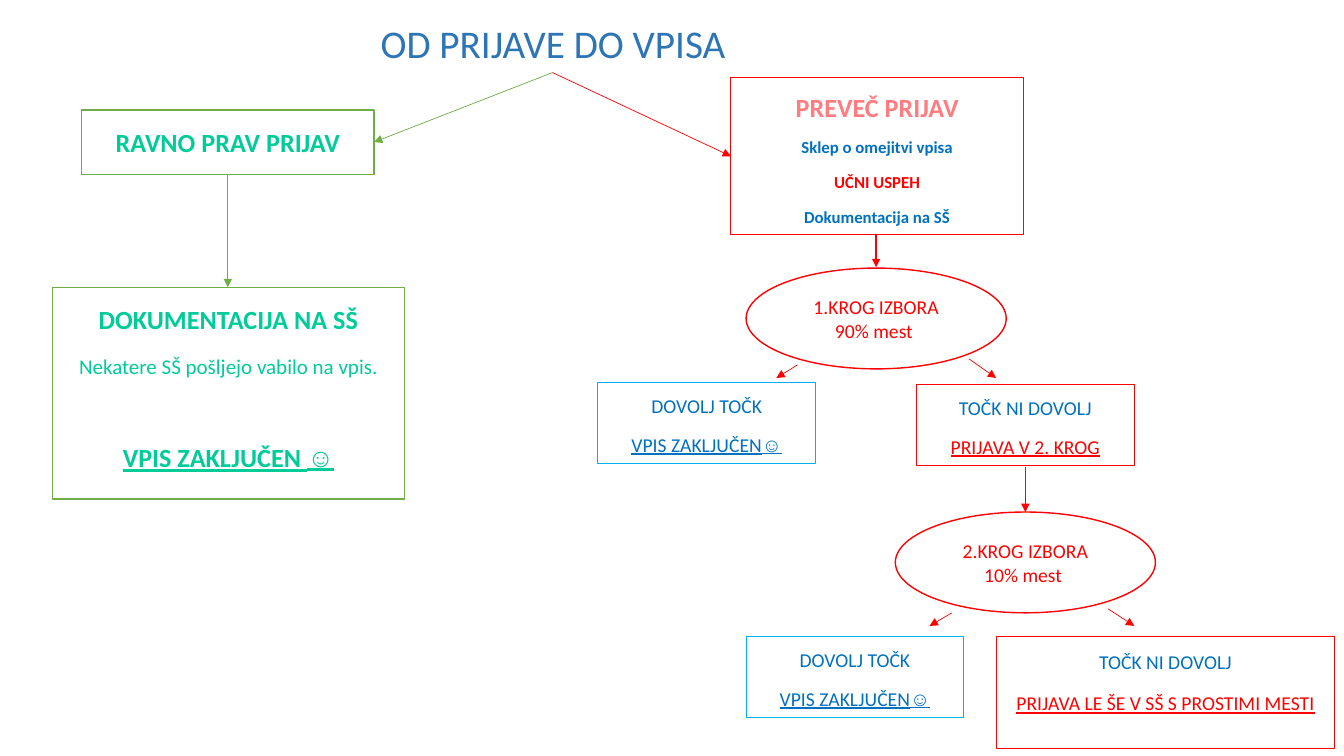
from lxml import etree
from pptx import Presentation
from pptx import util as u
from pptx.dml.color import RGBColor
from pptx.enum import shapes, text
from pptx.oxml import ns

PX = 9144  # 100 px to the inch
COLOURS = {
    "title": "2E75B6", "green": "70AD47", "mint": "00CC99", "white": "FFFFFF",
    "red": "FF0000", "pink": "FF7C80", "blue": "0070C0", "sky": "00B0F0",
}
SMILEY = "☺"


def colour(name):
    return RGBColor.from_string(COLOURS[name])


def line(words, size, ink, bold=False, underline=False, before=7.5):
    return {"words": words, "size": size, "ink": ink, "bold": bold,
            "underline": underline, "before": before}


class FlowPage:
    font = "Calibri"
    symbol_font = "Arial Narrow"

    def __init__(self, deck):
        self.page = deck.slides.add_slide(deck.slide_layouts[5])

    def fill_text(self, frame, lines, spacing=None):
        frame.word_wrap = True
        for number, item in enumerate(lines):
            para = frame.add_paragraph() if number else frame.paragraphs[0]
            para.alignment = text.PP_ALIGN.CENTER
            if spacing:
                para.line_spacing = spacing
                para.space_before = u.Pt(item["before"])
            para.font.size = u.Pt(item["size"])
            para.font.bold = item["bold"]
            para.font.underline = item["underline"]
            para.font.color.rgb = colour(item["ink"])
            para.font.name = self.font
            words, smiley, _ = item["words"].partition(SMILEY)
            para.add_run().text = words
            if smiley:
                span = para.add_run()
                span.text = smiley
                span.font.name = self.symbol_font

    def title(self, place, item):
        box = self.page.shapes.title
        box.left, box.top, box.width, box.height = (n * PX for n in place)
        box.text_frame.auto_size = text.MSO_AUTO_SIZE.NONE
        box.text_frame.vertical_anchor = text.MSO_ANCHOR.TOP
        self.fill_text(box.text_frame, [item])

    def outline(self, kind, place, edge, weight, fill=None):
        shape = self.page.shapes.add_shape(kind, *(n * PX for n in place))
        shape.shadow.inherit = False
        if fill:
            shape.fill.solid()
            shape.fill.fore_color.rgb = colour(fill)
        else:
            shape.fill.background()
        shape.line.color.rgb = colour(edge)
        shape.line.width = u.Pt(weight)
        return shape

    def box(self, place, edge, lines, weight=0.75, spacing=1.2, fill=None):
        shape = self.outline(shapes.MSO_SHAPE.RECTANGLE, place, edge, weight, fill)
        frame = shape.text_frame
        frame.vertical_anchor = text.MSO_ANCHOR.TOP
        frame.margin_left = frame.margin_right = 13 * PX
        frame.margin_top = frame.margin_bottom = 7 * PX
        self.fill_text(frame, lines, spacing)

    def ellipse(self, place, edge, lines):
        shape = self.outline(shapes.MSO_SHAPE.OVAL, place, edge, 1)
        shape.text_frame.vertical_anchor = text.MSO_ANCHOR.MIDDLE
        self.fill_text(shape.text_frame, lines)

    def arrow(self, start, end, ink, weight=0.5):
        link = self.page.shapes.add_connector(
            shapes.MSO_CONNECTOR.STRAIGHT, *(n * PX for n in start + end))
        link.line.color.rgb = colour(ink)
        link.line.width = u.Pt(weight)
        properties = link.element.spPr
        etree.SubElement(properties.find(ns.qn("a:ln")), ns.qn("a:tailEnd"), type="triangle")
        etree.SubElement(properties, ns.qn("a:effectLst"))


def draw_enough(flow):
    """Left branch: the number of applications fits."""
    style = {"weight": 1, "spacing": 1.3, "fill": "white"}
    flow.box((81, 109, 290, 64), "green",
             [line("RAVNO PRAV PRIJAV", 18.7, "mint", bold=True)], **style)
    flow.box((52, 285, 349, 210), "green", [
        line("DOKUMENTACIJA NA SŠ", 18.7, "mint", bold=True),
        line("Nekatere SŠ pošljejo vabilo na vpis.", 15, "mint"),
        line("VPIS ZAKLJUČEN " + SMILEY, 18.7, "mint", True, True, before=38.5),
    ], **style)
    flow.arrow((548, 72), (371, 141), "green")
    flow.arrow((226, 173), (226, 285), "green")


def draw_too_many(flow):
    """Right branch: too many applications, two selection rounds."""
    flow.box((725, 77, 290, 156), "red", [
        line("PREVEČ PRIJAV", 18.7, "pink", bold=True),
        line("Sklep o omejitvi vpisa", 12, "blue", bold=True),
        line("UČNI USPEH", 12, "red", bold=True),
        line("Dokumentacija na SŠ", 12, "blue", bold=True),
    ])
    rounds = [
        ("1.KROG IZBORA", "90% mest ", (740, 266), (593, 379),
         (909, 381, 216, 81), "PRIJAVA V 2. KROG", 1.2),
        ("2.KROG IZBORA", "10% mest ", (888, 508), (740, 631),
         (988, 631, 336, 112), "PRIJAVA LE ŠE V SŠ S PROSTIMI MESTI", 1.3),
    ]
    for name, share, oval, passed, failed, next_step, spacing in rounds:
        flow.ellipse(oval + (258, 100), "red",
                     [line(name, 14, "red"), line(share, 14, "red")])
        flow.box(passed + (216, 81), "sky", [
            line("DOVOLJ TOČK", 14, "blue"),
            line("VPIS ZAKLJUČEN" + SMILEY, 14, "blue", underline=True),
        ])
        flow.box(failed, "red", [
            line("TOČK NI DOVOLJ", 14, "blue"),
            line(next_step, 14, "red", underline=True),
        ], spacing=spacing)
    for start, end, weight in [
        ((548, 72), (725, 155), 0.5),
        ((869, 233), (869, 265), 1.5),
        ((791, 362), (770, 375), 0.5),
        ((961, 356), (988, 375), 0.5),
        ((1017, 463), (1017, 508), 1),
        ((944, 608), (922, 621), 0.5),
        ((1099, 604), (1125, 621), 0.5),
    ]:
        flow.arrow(start, end, "red", weight)


def main():
    deck = Presentation()
    deck.slide_width, deck.slide_height = 1333 * PX, 750 * PX
    flow = FlowPage(deck)
    flow.title((356, 14, 385, 57), line("OD PRIJAVE DO VPISA", 28, "title"))
    draw_enough(flow)
    draw_too_many(flow)
    deck.save("out.pptx")


if __name__ == "__main__":
    main()
